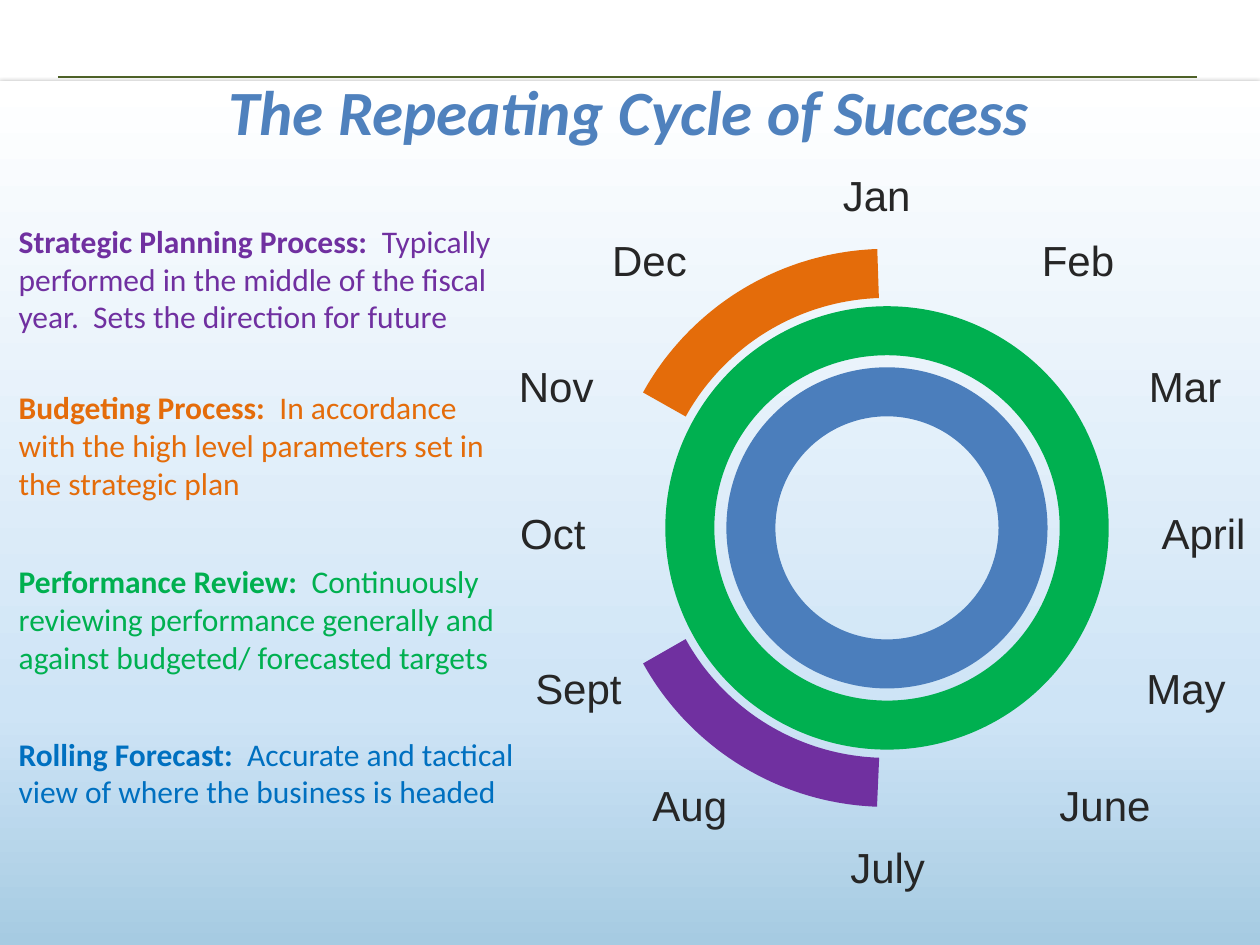
import copy
import math

import lxml.etree
import pptx
import pptx.dml.color
import pptx.enum.shapes
import pptx.enum.text
import pptx.oxml
import pptx.oxml.ns
import pptx.util

COLUMNS, ROWS = 100, 75
CENTER = (70.4, 41.9)
BAND_WIDTH = 28
PURPLE, ORANGE, GREEN = "7030A0", "E46C0A", "00B050"

PROCESSES = [
    (16, 41, PURPLE, "Strategic Planning Process:  ",
     "Typically performed in the middle of the fiscal year.  Sets the direction for future"),
    (29.2, 41, ORANGE, "Budgeting Process:  ",
     "In accordance with the high level parameters set in the strategic plan"),
    (43, 42.5, GREEN, "Performance Review:  ",
     "Continuously reviewing performance generally and against budgeted/ forecasted targets"),
    (55.2, 42.3, "0070C0", "Rolling Forecast:  ",
     "Accurate and tactical view of where the business is headed"),
]

MONTH_ROWS = [
    (13, [("Jan", 65.9, 7.5)]),
    (18.1, [("Dec", 47.6, 8), ("Feb", 81.7, 7.8)]),
    (28.1, [("Nov", 40.2, 8), ("Mar", 90.2, 7.8)]),
    (39.8, [("Oct", 40.3, 7.3), ("April", 91.2, 8.9)]),
    (52.1, [("Sept", 41.5, 9), ("May", 90, 8.4)]),
    (61.4, [("Aug", 50.8, 8.1), ("June", 83.1, 9.3)]),
    (66.3, [("July", 66.5, 8)]),
]

RINGS = [(10.8, "4B7EBC"), (15.65, GREEN)]
ARCS = [(209, 268, ORANGE), (92, 151, PURPLE)]


def color(value):
    return pptx.dml.color.RGBColor.from_string(value)


class SlideBuilder:
    def __init__(self, deck):
        self.deck = deck
        self.slide = deck.slides.add_slide(deck.slide_layouts[5])
        self.shapes = self.slide.shapes

    def x(self, columns):
        return round(self.deck.slide_width * columns / COLUMNS)

    def y(self, rows):
        return round(self.deck.slide_height * rows / ROWS)

    def area(self, left, top, width, height):
        return self.x(left), self.y(top), self.x(width), self.y(height)

    def add_span(self, para, text, size, font, ink, bold=False, italic=False):
        span = para.add_run()
        span.text = text
        span.font.size = pptx.util.Pt(size)
        span.font.name = font
        span.font.bold = bold
        span.font.italic = italic
        span.font.color.rgb = color(ink)

    def add_rule(self, left, right, row, ink):
        rule = self.shapes.add_connector(
            pptx.enum.shapes.MSO_CONNECTOR.STRAIGHT,
            self.x(left), self.y(row), self.x(right), self.y(row))
        rule.line.color.rgb = color(ink)
        rule.line.width = pptx.util.Pt(1)
        lxml.etree.SubElement(rule.element.spPr, pptx.oxml.ns.qn("a:effectLst"))

    def add_panel(self, area, stops):
        panel = self.shapes.add_shape(pptx.enum.shapes.MSO_SHAPE.RECTANGLE, *self.area(*area))
        panel.line.fill.background()
        panel.fill.gradient()
        panel.fill.gradient_angle = 90
        stop_list = panel.element.spPr.find(".//" + pptx.oxml.ns.qn("a:gsLst"))
        stop_list.insert(1, copy.deepcopy(stop_list[0]))
        for stop, (position, ink) in zip(panel.fill.gradient_stops, stops):
            stop.position = position
            stop.color.rgb = color(ink)
        panel.element.spPr.append(pptx.oxml.parse_xml(
            f'<a:effectLst {pptx.oxml.ns.nsdecls("a")}>'
            '<a:outerShdw blurRad="39370" dist="20320" dir="5400000" rotWithShape="0">'
            '<a:srgbClr val="000000"><a:alpha val="38000"/></a:srgbClr>'
            '</a:outerShdw></a:effectLst>'))

    def add_title(self, area, text):
        title = self.shapes.title
        title.left, title.top, title.width, title.height = self.area(*area)
        self.shapes[-1].element.addnext(title.element)
        frame = title.text_frame
        frame.vertical_anchor = pptx.enum.text.MSO_ANCHOR.MIDDLE
        frame.auto_size = pptx.enum.text.MSO_AUTO_SIZE.NONE
        para = frame.paragraphs[0]
        para.alignment = pptx.enum.text.PP_ALIGN.CENTER
        self.add_span(para, text, 36, "Calibri", "4F81BD", bold=True, italic=True)

    def add_process(self, area, ink, heading, description):
        box = self.shapes.add_shape(pptx.enum.shapes.MSO_SHAPE.TRAPEZOID, *self.area(*area))
        box.adjustments[0] = 0
        box.shadow.inherit = False
        box.fill.background()
        box.line.fill.background()
        frame = box.text_frame
        frame.word_wrap = True
        frame.vertical_anchor = pptx.enum.text.MSO_ANCHOR.MIDDLE
        para = frame.paragraphs[0]
        para.alignment = pptx.enum.text.PP_ALIGN.LEFT
        self.add_span(para, heading, 18, "Calibri", ink, bold=True)
        self.add_span(para, description, 18, "Calibri", ink)

    def add_month(self, area, name):
        box = self.shapes.add_textbox(*self.area(*area))
        frame = box.text_frame
        frame.word_wrap = False
        frame.auto_size = pptx.enum.text.MSO_AUTO_SIZE.SHAPE_TO_FIT_TEXT
        self.add_span(frame.paragraphs[0], name, 24, "Arial", "262626")

    def style_band(self, band, ink):
        band.shadow.inherit = False
        band.fill.background()
        band.line.color.rgb = color(ink)
        band.line.width = pptx.util.Pt(BAND_WIDTH)

    def add_ring(self, center, radius, ink):
        ring = self.shapes.add_shape(
            pptx.enum.shapes.MSO_SHAPE.OVAL,
            *self.area(center[0] - radius, center[1] - radius, 2 * radius, 2 * radius))
        self.style_band(ring, ink)

    def add_arc(self, center, radius, start, end, ink):
        points = [
            (self.x(center[0] + radius * math.cos(math.radians(angle))),
             self.y(center[1] + radius * math.sin(math.radians(angle))))
            for angle in range(start, end + 1)
        ]
        outline = self.shapes.build_freeform(*points[0])
        outline.add_line_segments(points[1:], close=False)
        self.style_band(outline.convert_to_shape(), ink)


def main():
    deck = pptx.Presentation()
    deck.slide_width = pptx.util.Inches(10)
    deck.slide_height = pptx.util.Inches(7.5)
    page = SlideBuilder(deck)

    page.add_rule(4.6, 95, 6.1, "4F6228")
    page.add_panel((0, 6.4, 100, 68.6), [(0, "A6CBE2"), (0.27, "CEE4F6"), (1, "FFFFFF")])
    page.add_title((8.1, 5.6, 83.6, 6.3), "The Repeating Cycle of Success")
    for top, width, ink, heading, description in PROCESSES:
        page.add_process((0.5, top, width, 12.2), ink, heading, description)
    for radius, ink in RINGS:
        page.add_ring(CENTER, radius, ink)
    for start, end, ink in ARCS:
        page.add_arc(CENTER, 20.2, start, end, ink)
    for top, months in MONTH_ROWS:
        for name, left, width in months:
            page.add_month((left, top, width, 5), name)

    deck.save("out.pptx")


if __name__ == "__main__":
    main()
